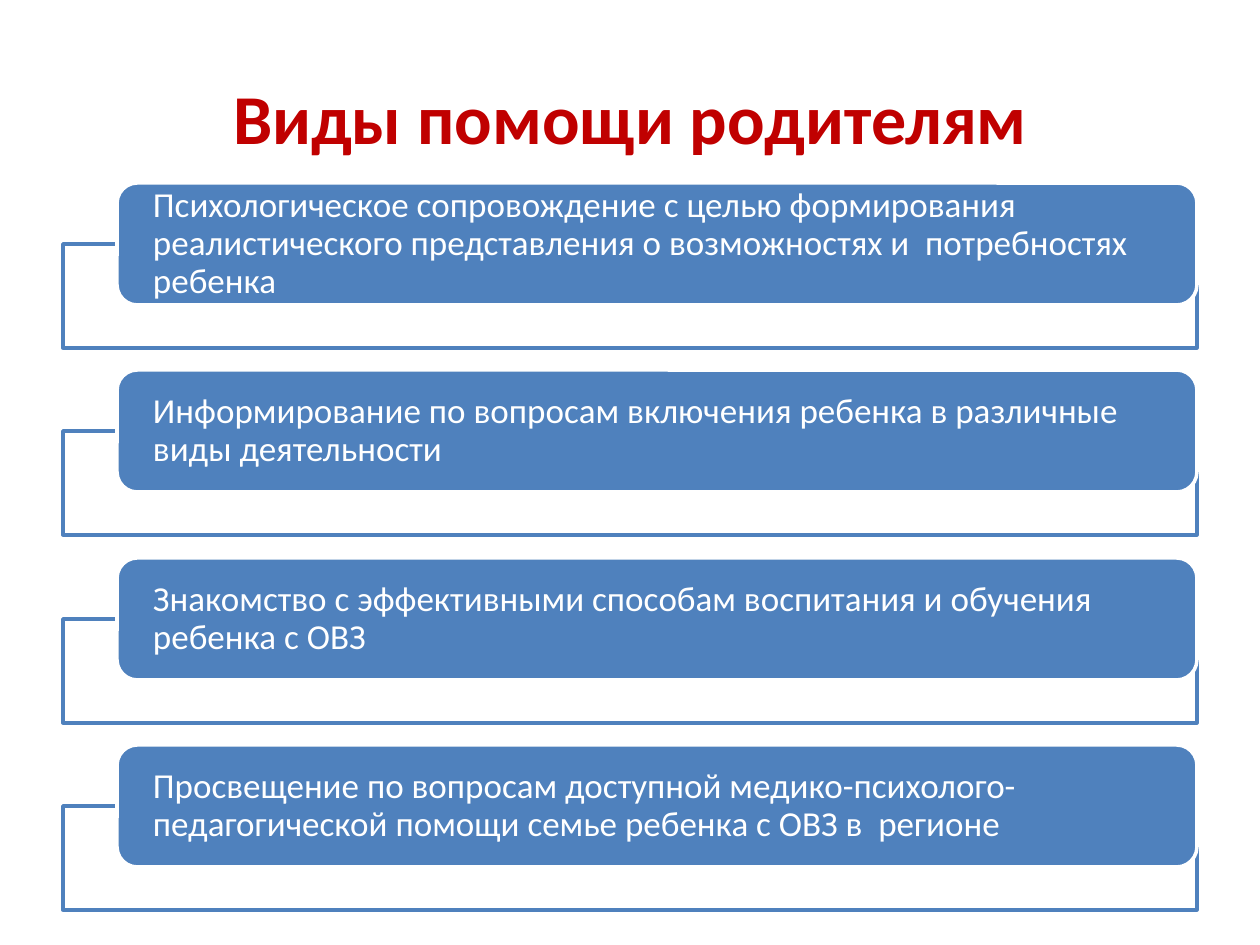
"""Build a slide listing the kinds of help offered to parents."""
from dataclasses import dataclass

from lxml import etree
from pptx import Presentation
from pptx.dml.color import RGBColor
from pptx.enum.shapes import MSO_SHAPE
from pptx.enum.text import MSO_ANCHOR, PP_ALIGN
from pptx.oxml.ns import qn
from pptx.util import Pt

PX = 914400 // 126
RED = RGBColor(0xC0, 0x00, 0x00)
BLUE = RGBColor(0x4F, 0x81, 0xBD)
WHITE = RGBColor(0xFF, 0xFF, 0xFF)
RECT, ROUNDED = MSO_SHAPE.RECTANGLE, MSO_SHAPE.ROUNDED_RECTANGLE
MIDDLE = MSO_ANCHOR.MIDDLE
LEFT, CENTER = PP_ALIGN.LEFT, PP_ALIGN.CENTER


@dataclass(frozen=True)
class Box:
    x: int
    y: int
    w: int
    h: int

    def emu(self):
        return [v * PX for v in (self.x, self.y, self.w, self.h)]

    def down(self, dy: int):
        return Box(self.x, self.y + dy, self.w, self.h)


TITLE = Box(63, 38, 1134, 157)
FRAME = Box(63, 244, 1134, 104)
LABEL = Box(117, 183, 1080, 122)
TWO_ROWS = 375
HELP_TYPES = (
    "Психологическое сопровождение с целью формирования реалистического "
    "представления о возможностях и  потребностях ребенка",
    "Информирование по вопросам включения ребенка в различные виды деятельности",
    "Знакомство с эффективными способам воспитания и обучения ребенка с ОВЗ",
    "Просвещение по вопросам доступной медико-психолого-педагогической "
    "помощи семье ребенка с ОВЗ в  регионе",
)


def write(sp, text: str, *, size: int, color: RGBColor, align=LEFT,
          bold=False, margin=13, spacing=1.0, after=0):
    tf = sp.text_frame
    tf.word_wrap = True
    tf.vertical_anchor = MIDDLE
    tf.margin_left = tf.margin_right = margin * PX
    tf.margin_top = tf.margin_bottom = 0
    p = tf.paragraphs[0]
    p.alignment = align
    p.line_spacing = spacing
    p.space_after = Pt(after)
    r = p.add_run()
    r.text = text
    r.font.name = "Calibri"
    r.font.size = Pt(size)
    r.font.bold = bold
    r.font.color.rgb = color


def add_box(s, kind, box: Box, fill: RGBColor, line: RGBColor):
    sp = s.shapes.add_shape(kind, *box.emu())
    sp.shadow.inherit = False
    sp.fill.solid()
    sp.fill.fore_color.rgb = fill
    sp.line.color.rgb = line
    sp.line.width = Pt(2)
    return sp


def set_opacity(sp, percent: int):
    color = sp.fill._xPr.find(qn("a:solidFill"))[0]
    etree.SubElement(color, qn("a:alpha"), val=str(percent * 1000))


def add_help_type(s, text: str, dy: int):
    frame = add_box(s, RECT, FRAME.down(dy), WHITE, BLUE)
    set_opacity(frame, 90)
    label = add_box(s, ROUNDED, LABEL.down(dy), BLUE, WHITE)
    write(label, text, size=20, color=WHITE, margin=30, spacing=0.9, after=7)


def main():
    prs = Presentation()
    prs.slide_width, prs.slide_height = 1260 * PX, 945 * PX
    s = prs.slides.add_slide(prs.slide_layouts[5])
    title = s.shapes.title
    title.left, title.top, title.width, title.height = TITLE.emu()
    write(title, "Виды помощи родителям", size=40, color=RED,
          align=CENTER, bold=True)
    for i, text in enumerate(HELP_TYPES):
        add_help_type(s, text, i * TWO_ROWS // 2)
    prs.save("out.pptx")


if __name__ == "__main__":
    main()
